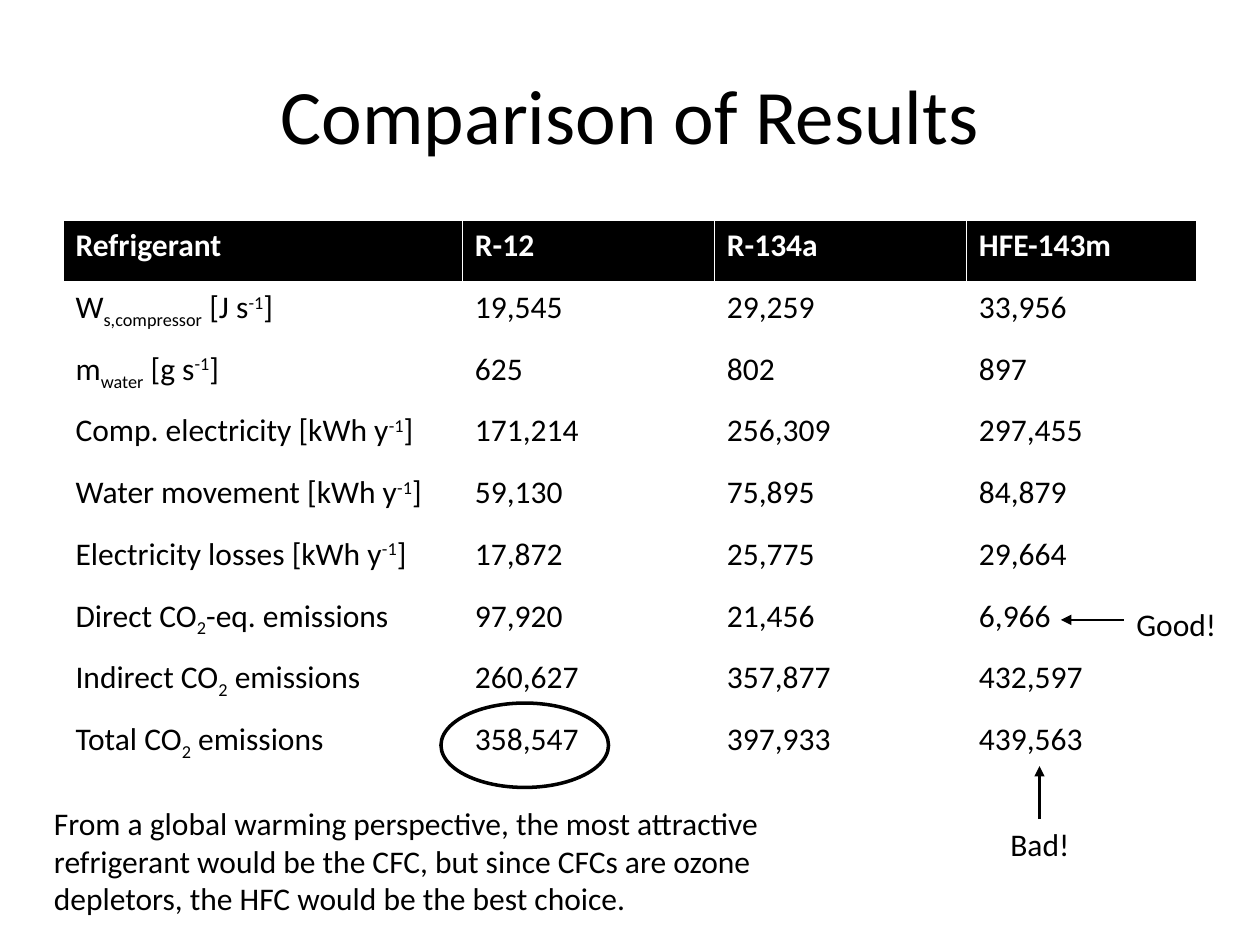
from dataclasses import dataclass

from lxml import etree
from pptx import Presentation
from pptx.dml.color import RGBColor
from pptx.enum.shapes import MSO_CONNECTOR, MSO_SHAPE
from pptx.enum.text import MSO_ANCHOR, MSO_AUTO_SIZE, PP_ALIGN
from pptx.oxml.ns import qn
from pptx.util import Inches, Pt

STRAIGHT = MSO_CONNECTOR.STRAIGHT
OVAL = MSO_SHAPE.OVAL
MIDDLE = MSO_ANCHOR.MIDDLE
CENTER = PP_ALIGN.CENTER
GROW = MSO_AUTO_SIZE.SHAPE_TO_FIT_TEXT


@dataclass(frozen=True)
class Theme:
    font: str = "Calibri"
    ink: RGBColor = RGBColor(0, 0, 0)
    paper: RGBColor = RGBColor(255, 255, 255)
    title_size: Pt = Pt(44)
    body_size: Pt = Pt(18)
    arrow_width: Pt = Pt(1.5)
    ring_width: Pt = Pt(2)


@dataclass(frozen=True)
class Note:
    text: str
    left: float
    top: float
    width: float
    height: float


@dataclass(frozen=True)
class Arrow:
    start: tuple[float, float]
    end: tuple[float, float]


THEME = Theme()
COLUMN_WIDTHS = (3.17, 2, 2, 1.83)
ROW_HEIGHT = 0.49
HEADER = ("Refrigerant", "R-12", "R-134a", "HFE-143m")

# "|" separates spans; a span led by "_" is subscript, by "^" superscript
BASELINES = {"_": "-25000", "^": "30000"}
RESULTS = (
    ("W|_s,compressor| [J s|^-1|]", "19,545", "29,259", "33,956"),
    ("m|_water| [g s|^-1|]", "625", "802", "897"),
    ("Comp. electricity [kWh y|^-1|]", "171,214", "256,309", "297,455"),
    ("Water movement [kWh y|^-1|]", "59,130", "75,895", "84,879"),
    ("Electricity losses [kWh y|^-1|]", "17,872", "25,775", "29,664"),
    ("Direct CO|_2|-eq. emissions", "97,920", "21,456", "6,966"),
    ("Indirect CO|_2| emissions", "260,627", "357,877", "432,597"),
    ("Total CO|_2| emissions", "358,547", "397,933", "439,563"),
)
NOTES = (
    Note("Good!", 8.92, 4.75, 0.85, 0.4),
    Note("Bad!", 7.92, 6.5, 0.85, 0.4),
    Note("From a global warming perspective, the most attractive refrigerant "
         "would be the CFC, but since CFCs are ozone depletors, the HFC would "
         "be the best choice.", 0.33, 6.33, 5.92, 1.01),
)
ARROWS = (Arrow((8.92, 4.92), (8.42, 4.92)), Arrow((8.25, 6.5), (8.25, 6.08)))


def style_text(para, size: Pt, color: RGBColor, bold: bool = False) -> None:
    font = para.font
    font.name, font.size, font.bold = THEME.font, size, bold
    font.color.rgb = color


def write_spans(para, markup: str) -> None:
    for piece in markup.split("|"):
        span = para.add_run()
        span.text = piece.lstrip("_^")
        if piece[0] in BASELINES:
            span.font._element.set("baseline", BASELINES[piece[0]])


def add_title(page, text: str) -> None:
    title = page.shapes.title
    title.left, title.top = Inches(0.5), Inches(0.3)
    title.width, title.height = Inches(9), Inches(1.2)
    title.text_frame.text = text
    title.text_frame.vertical_anchor = MIDDLE
    para = title.text_frame.paragraphs[0]
    para.alignment = CENTER
    style_text(para, THEME.title_size, THEME.ink)


def add_results(page) -> None:
    rows = (HEADER, *RESULTS)
    table = page.shapes.add_table(
        len(rows), len(HEADER), Inches(0.5), Inches(1.75),
        Inches(sum(COLUMN_WIDTHS)), Inches(ROW_HEIGHT * len(rows))).table
    table.horz_banding = False
    for column, width in zip(table.columns, COLUMN_WIDTHS):
        column.width = Inches(width)
    for row_index, values in enumerate(rows):
        is_header = row_index == 0
        table.rows[row_index].height = Inches(ROW_HEIGHT)
        for cell, value in zip(table.rows[row_index].cells, values):
            cell.fill.solid()
            cell.fill.fore_color.rgb = THEME.ink if is_header else THEME.paper
            para = cell.text_frame.paragraphs[0]
            write_spans(para, value)
            style_text(para, THEME.body_size,
                       THEME.paper if is_header else THEME.ink, is_header)


def add_note(page, note: Note) -> None:
    box = page.shapes.add_textbox(Inches(note.left), Inches(note.top),
                                  Inches(note.width), Inches(note.height))
    frame = box.text_frame
    frame.word_wrap = True
    frame.auto_size = GROW
    frame.text = note.text
    style_text(frame.paragraphs[0], THEME.body_size, THEME.ink)


def add_arrow(page, arrow: Arrow) -> None:
    points = [Inches(value) for value in (*arrow.start, *arrow.end)]
    connector = page.shapes.add_connector(STRAIGHT, *points)
    connector.line.color.rgb = THEME.ink
    connector.line.width = THEME.arrow_width
    outline = connector.line._get_or_add_ln()
    etree.SubElement(outline, qn("a:tailEnd"), type="triangle")
    etree.SubElement(connector._element.spPr, qn("a:effectLst"))


def add_ring(page) -> None:
    ring = page.shapes.add_shape(OVAL, Inches(3.5), Inches(5.58),
                                 Inches(1.33), Inches(0.67))
    ring.shadow.inherit = False
    ring.fill.background()
    ring.line.color.rgb = THEME.ink
    ring.line.width = THEME.ring_width


def main() -> None:
    deck = Presentation()
    deck.slide_width, deck.slide_height = Inches(10), Inches(7.5)
    page = deck.slides.add_slide(deck.slide_layouts.get_by_name("Title Only"))

    # Title and table
    add_title(page, "Comparison of Results")
    add_results(page)

    # Remarks on the best and worst values
    for arrow in ARROWS:
        add_arrow(page, arrow)
    for note in NOTES:
        add_note(page, note)
    add_ring(page)

    deck.save("out.pptx")


if __name__ == "__main__":
    main()
